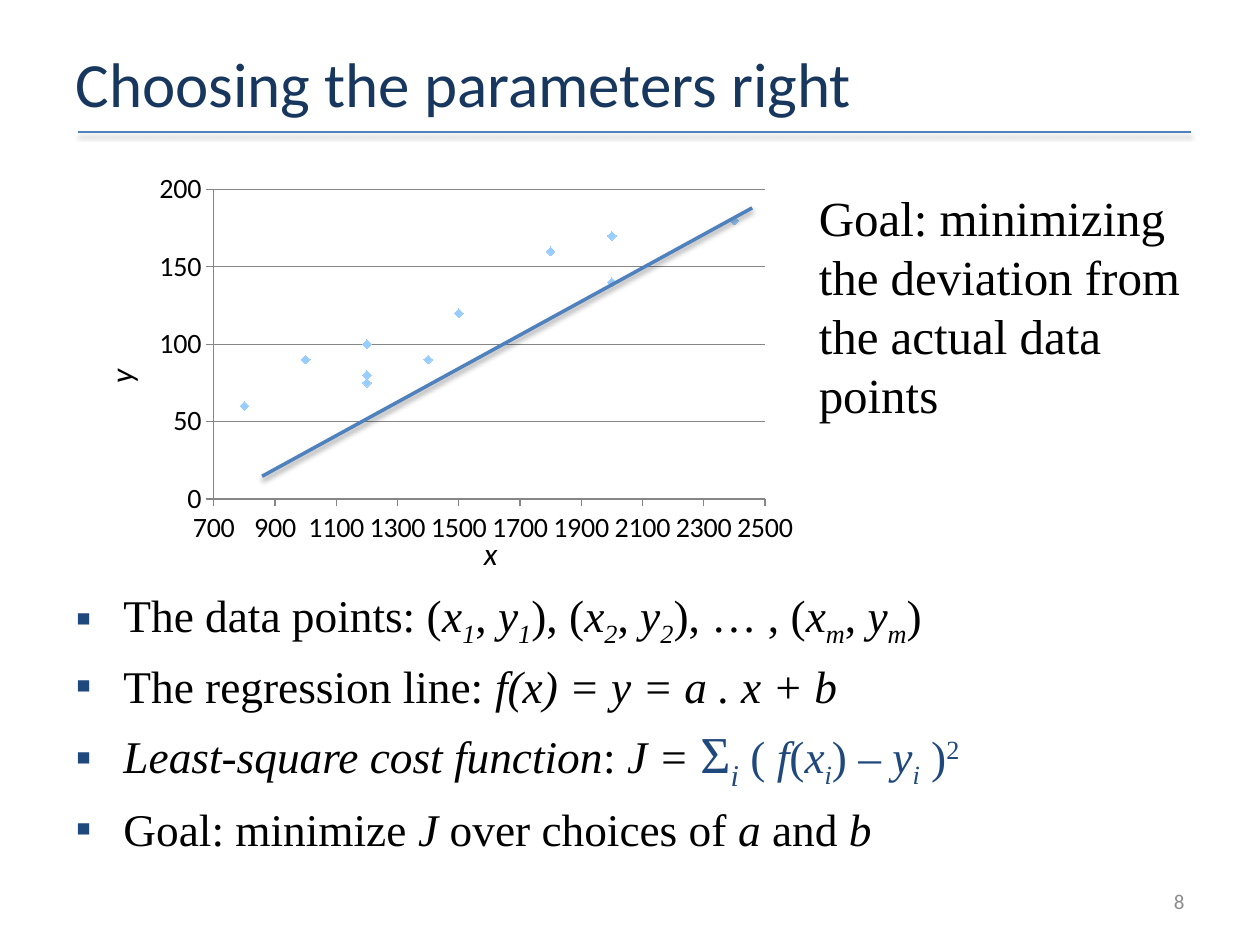
from lxml import etree
from pptx import Presentation
from pptx.chart.data import XyChartData
from pptx.dml.color import RGBColor
from pptx.enum.chart import XL_CHART_TYPE, XL_MARKER_STYLE, XL_TICK_MARK
from pptx.enum.shapes import MSO_CONNECTOR
from pptx.enum.text import MSO_ANCHOR, MSO_AUTO_SIZE, PP_ALIGN
from pptx.oxml import parse_xml
from pptx.oxml.ns import nsdecls, qn
from pptx.util import Inches, Pt

SCATTER = XL_CHART_TYPE.XY_SCATTER
DIAMOND = XL_MARKER_STYLE.DIAMOND
OUT, NONE = XL_TICK_MARK.OUTSIDE, XL_TICK_MARK.NONE
LINE = MSO_CONNECTOR.STRAIGHT
TOP, MID = MSO_ANCHOR.TOP, MSO_ANCHOR.MIDDLE
LEFT, CENTER, RIGHT = PP_ALIGN.LEFT, PP_ALIGN.CENTER, PP_ALIGN.RIGHT
FIXED = MSO_AUTO_SIZE.NONE
SANS, SERIF = "Calibri", "Times New Roman"
BLACK, NAVY, BLUE, GRAY = "000000", "1F497D", "4F81BD", "868686"


def color(code):
    return RGBColor.from_string(code)


def write(para, text, size=18, font=SANS, ink=BLACK, italic=False, base=0):
    run = para.add_run()
    run.text = text
    face = run.font
    face.size, face.name, face.italic = Pt(size), font, italic
    face.color.rgb = color(ink)
    if base:
        run._r.get_or_add_rPr().set("baseline", str(base * 1000))


def bullet(para, mark, ink):
    props = para._p.get_or_add_pPr()
    props.set("marL", str(Inches(0.38)))
    props.set("indent", str(-Inches(0.38)))
    tint = etree.SubElement(props, qn("a:buClr"))
    etree.SubElement(tint, qn("a:srgbClr")).set("val", ink)
    etree.SubElement(props, qn("a:buFont")).set("typeface", SERIF)
    etree.SubElement(props, qn("a:buChar")).set("char", mark)


class Deck:
    def __init__(self):
        self.prs = Presentation()
        self.prs.slide_width, self.prs.slide_height = Inches(10), Inches(7.5)
        self.slide = self.prs.slides.add_slide(self.prs.slide_layouts[1])

    def place(self, shape, box, anchor):
        shape.left, shape.top, shape.width, shape.height = map(Inches, box)
        frame = shape.text_frame
        frame.word_wrap, frame.auto_size = True, FIXED
        frame.vertical_anchor = anchor
        return frame

    def title(self, text, box):
        para = self.place(self.slide.shapes.title, box, MID).paragraphs[0]
        para.alignment = LEFT
        write(para, text, size=36, ink="17375E")

    def items(self, rows, box):
        frame = self.place(self.slide.placeholders[1], box, TOP)
        for num, row in enumerate(rows):
            para = frame.add_paragraph() if num else frame.paragraphs[0]
            para.space_before = Pt(5.2)
            bullet(para, "▪", NAVY)
            for text, marks in row:
                write(para, text, font=SERIF, italic="i" in marks,
                      size=29.6 if "L" in marks else 25.9,
                      ink=NAVY if "c" in marks else BLACK,
                      base=-25 if "_" in marks else 30 if "^" in marks else 0)

    def label(self, text, box, align=LEFT, anchor=TOP, turn=0, gap=0, **look):
        shape = self.slide.shapes.add_textbox(0, 0, 0, 0)
        shape.rotation = turn
        para = self.place(shape, box, anchor).paragraphs[0]
        para.alignment, para.space_before = align, Pt(gap)
        write(para, text, **look)

    def line(self, start, end, width):
        link = self.slide.shapes.add_connector(LINE, *map(Inches, start + end))
        link.line.color.rgb, link.line.width = color(BLUE), Pt(width)
        link._element.spPr.append(parse_xml(
            f'<a:effectLst {nsdecls("a")}><a:outerShdw blurRad="40000" dist="20000" '
            'dir="5400000" rotWithShape="0"><a:srgbClr val="000000">'
            '<a:alpha val="38000"/></a:srgbClr></a:outerShdw></a:effectLst>'))

    def axis(self, axis, low, high, step, grid):
        axis.minimum_scale, axis.maximum_scale, axis.major_unit = low, high, step
        axis.major_tick_mark, axis.minor_tick_mark = OUT, NONE
        axis.has_major_gridlines = grid
        axis.has_title = False
        axis.format.line.color.rgb = color(GRAY)
        if grid:
            axis.major_gridlines.format.line.color.rgb = color(GRAY)
        face = axis.tick_labels.font
        face.size, face.name = Pt(16), SANS
        face.color.rgb = color(BLACK)

    def chart(self, points, box, inner):
        data = XyChartData()
        series = data.add_series("Series 1")
        for x, y in points:
            series.add_data_point(x, y)
        chart = self.slide.shapes.add_chart(SCATTER, *map(Inches, box), data).chart
        chart.has_legend = chart.has_title = False
        chart.font.name, chart.font.size = SANS, Pt(10)
        plot = chart.plots[0]
        plot.vary_by_categories = False
        dots = plot.series[0]
        dots.smooth = False
        dots.format.line.fill.background()
        dots.marker.style, dots.marker.size = DIAMOND, 5
        dots.marker.format.fill.solid()
        dots.marker.format.fill.fore_color.rgb = color("99CCFF")
        dots.marker.format.line.fill.background()
        self.axis(chart.category_axis, 700, 2500, 200, False)
        self.axis(chart.value_axis, 0, 200, 50, True)
        area = chart._chartSpace.chart.plotArea
        for old in area.findall(qn("c:layout")):
            area.remove(old)
        sizes = "".join(f'<c:{key} val="{val}"/>' for key, val in zip("xywh", inner))
        area.insert(0, parse_xml(
            f'<c:layout {nsdecls("c")}><c:manualLayout><c:layoutTarget val="inner"/>'
            f'<c:xMode val="edge"/><c:yMode val="edge"/>{sizes}'
            '</c:manualLayout></c:layout>'))


def pair(sub):
    return [("x", "i"), (sub, "i_"), (", ", ""), ("y", "i"), (sub, "i_")]


def main():
    deck = Deck()
    deck.line((0.62, 1.05), (9.45, 1.05), 1)
    deck.title("Choosing the parameters right", (0.5, 0.3, 9, 0.71))
    deck.items([
        [("The data points: (", ""), *pair("1"), ("), (", ""), *pair("2"),
         ("), … , (", ""), *pair("m"), (")", "")],
        [("The regression line: ", ""), ("f(x) = y = a . x + b", "i")],
        [("Least-square cost function", "i"), (": ", ""), ("J = ", "i"),
         ("Σ", "cL"), ("i", "ciL_"), (" ( ", "c"), ("f", "ci"), ("(", "c"),
         ("x", "ci"), ("i", "ci_"), (")", "c"), (" – y", "ci"), ("i", "ci_"),
         (" )", "c"), ("2", "c^")],
        [("Goal: minimize ", ""), ("J ", "i"), ("over choices of ", ""),
         ("a ", "i"), ("and ", ""), ("b", "i")],
    ], (0.5, 4.61, 9, 2.09))
    deck.label("8", (7.17, 6.95, 2.33, 0.4), align=RIGHT, anchor=MID,
               size=12, ink="8C8C8C")
    deck.chart([(800, 60), (1000, 90), (1200, 80), (1200, 100), (1200, 75),
                (1400, 90), (1500, 120), (1800, 160), (2000, 140),
                (2000, 170), (2400, 180)],
               (1.17, 1.32, 5.27, 3.07), (0.1, 0.06, 0.83, 0.8))
    deck.label("x", (2.24, 4.19, 3.31, 0.42), align=CENTER, italic=True)
    deck.label("y ", (-0.69, 2.75, 3.31, 0.42), align=CENTER, turn=270, italic=True)
    deck.label("Goal: minimizing the deviation from the actual data points",
               (6.4, 1.44, 3.26, 2.09), gap=5.6, size=28, font=SERIF)
    deck.line((2.08, 3.78), (5.97, 1.65), 2)
    deck.prs.save("out.pptx")


if __name__ == "__main__":
    main()
